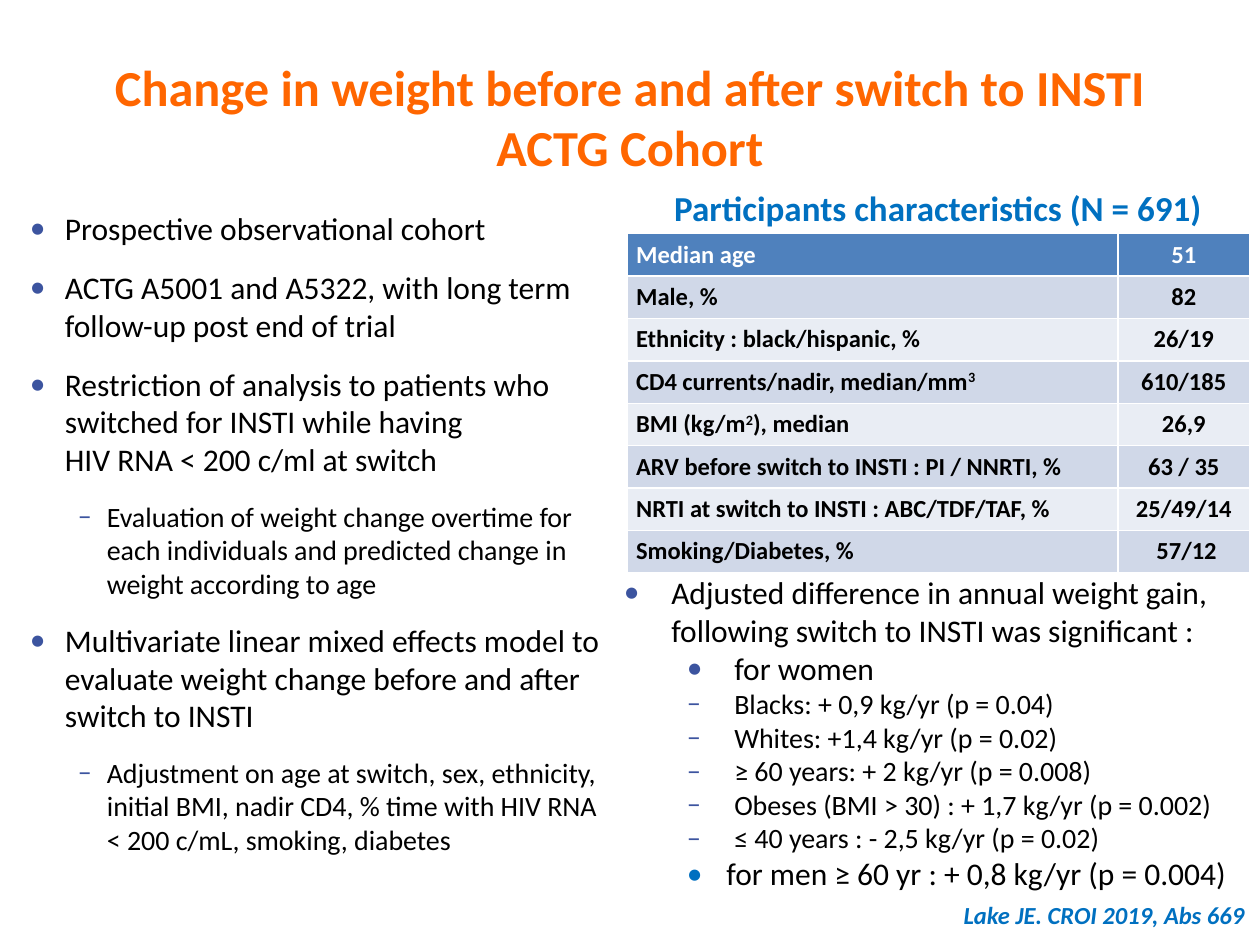
import pptx
import pptx.util
import pptx.oxml
import pptx.oxml.ns
import pptx.dml.color
import pptx.enum.text

Pt = pptx.util.Pt
qn = pptx.oxml.ns.qn
ALIGN = pptx.enum.text.PP_ALIGN
ANCHOR = pptx.enum.text.MSO_ANCHOR

COLORS = {
    "title": "FF6600", "text": "000000", "accent": "0070C0", "bullet": "3C549F",
    "header": "4F81BD", "header_text": "FFFFFF", "odd": "D0D8E8", "even": "E9EDF4",
}
FONTS = {
    "title": {"size": 28.8, "bold": True, "color": "title"},
    "heading": {"size": 20, "bold": True, "color": "accent"},
    "main": {"size": 18, "color": "text"},
    "sub": {"size": 16, "color": "text"},
    "header": {"size": 14, "bold": True, "color": "header_text"},
    "cell": {"size": 14, "bold": True, "color": "text"},
    "source": {"size": 14, "bold": True, "italic": True, "color": "accent"},
}
LEVELS = {
    "design": {"font": "main", "level": 0, "indent": 20, "hang": 20, "bullet": "•"},
    "detail": {"font": "sub", "level": 1, "indent": 44, "hang": 16.5, "bullet": "–"},
    "result": {"font": "main", "level": 0, "indent": 27, "hang": 27, "bullet": "•"},
    "women": {"font": "main", "level": 1, "indent": 63, "hang": 27, "bullet": "•"},
    "group": {"font": "sub", "level": 1, "indent": 63, "hang": 27, "bullet": "‒"},
    "men": {"font": "main", "level": 1, "indent": 58.5, "hang": 22.5, "bullet": "•",
            "bullet_color": "accent"},
}

TITLE = "Change in weight before and after switch to INSTI\nACTG Cohort"
HEADING = "Participants characteristics (N = 691)"
SOURCE = "Lake JE. CROI 2019, Abs 669"
METHODS = [
    ("design", "Prospective observational cohort"),
    ("design", "ACTG A5001 and A5322, with long term follow-up post end of trial"),
    ("design", "Restriction of analysis to patients who switched for INSTI while having \n"
               "HIV RNA < 200 c/ml at switch"),
    ("detail", "Evaluation of weight change overtime for each individuals and predicted "
               "change in weight according to age"),
    ("design", "Multivariate linear mixed effects model to evaluate weight change before "
               "and after switch to INSTI"),
    ("detail", "Adjustment on age at switch, sex, ethnicity, initial BMI, nadir CD4, "
               "% time with HIV RNA < 200 c/mL, smoking, diabetes"),
]
RESULTS = [
    ("result", "Adjusted difference in annual weight gain, following switch to INSTI "
               "was significant :"),
    ("women", "for women"),
    ("group", "Blacks: + 0,9 kg/yr (p = 0.04)"),
    ("group", "Whites: +1,4 kg/yr (p = 0.02)"),
    ("group", "≥ 60 years: + 2 kg/yr (p = 0.008)"),
    ("group", "Obeses (BMI > 30) : + 1,7 kg/yr (p = 0.002)"),
    ("group", "≤ 40 years : - 2,5 kg/yr (p = 0.02)"),
    ("men", "for men ≥ 60 yr : + 0,8 kg/yr (p = 0.004)"),
]
CHARACTERISTICS = [
    ("Median age", "51"),
    ("Male, %", "82"),
    ("Ethnicity : black/hispanic, %", "26/19"),
    ("CD4 currents/nadir, median/mm^3^", "610/185"),
    ("BMI (kg/m^2^), median", "26,9"),
    ("ARV before switch to INSTI : PI / NNRTI, %", "63 / 35"),
    ("NRTI at switch to INSTI : ABC/TDF/TAF, %", "25/49/14"),
    ("Smoking/Diabetes, %", " 57/12"),
]
COLUMN_WIDTHS = (280.5, 75)
ROW_HEIGHT = 24.25


def rgb(name):
    return pptx.dml.color.RGBColor.from_string(COLORS[name])


def write(p, text, style, align=None):
    p.alignment = align
    for i, part in enumerate(text.split("^")):
        for j, line in enumerate(part.split("\n")):
            if j:
                p.add_line_break()
            if not line:
                continue
            r = p.add_run()
            r.text = line
            r.font.name = "Calibri"
            for key, value in FONTS[style].items():
                if key == "color":
                    r.font.color.rgb = rgb(value)
                else:
                    setattr(r.font, key, Pt(value) if key == "size" else value)
            if i % 2:
                r.font._element.set("baseline", "30000")


def add_bullet(p, level):
    p.level = level["level"]
    pPr = p._p.get_or_add_pPr()
    pPr.set("marL", str(int(Pt(level["indent"]))))
    pPr.set("indent", str(-int(Pt(level["hang"]))))
    color = pptx.oxml.parse_xml(
        '<a:buClr xmlns:a="http://schemas.openxmlformats.org/drawingml/2006/main">'
        f'<a:srgbClr val="{COLORS[level.get("bullet_color", "bullet")]}"/></a:buClr>')
    pPr.append(color)
    for tag, attr, value in (("a:buFont", "typeface", "Calibri"),
                             ("a:buChar", "char", level["bullet"])):
        pPr.append(pptx.oxml.parse_xml(
            f'<{tag} xmlns:a="http://schemas.openxmlformats.org/drawingml/2006/main" '
            f'{attr}="{value}"/>'))


def add_box(s, place, wrap=True):
    tf = s.shapes.add_textbox(*map(Pt, place)).text_frame
    tf.word_wrap = wrap
    return tf


def add_list(s, place, items, gap=0):
    tf = add_box(s, place)
    for i, (name, text) in enumerate(items):
        p = tf.add_paragraph() if i else tf.paragraphs[0]
        p.space_before = Pt(gap if i else 0)
        p.space_after = Pt(gap)
        add_bullet(p, LEVELS[name])
        write(p, text, LEVELS[name]["font"])


def add_characteristics(s, left, top):
    rows = len(CHARACTERISTICS)
    table = s.shapes.add_table(rows, len(COLUMN_WIDTHS), Pt(left), Pt(top),
                               Pt(sum(COLUMN_WIDTHS)), Pt(ROW_HEIGHT * rows)).table
    for column, width in zip(table.columns, COLUMN_WIDTHS):
        column.width = Pt(width)
    for i, values in enumerate(CHARACTERISTICS):
        table.rows[i].height = Pt(ROW_HEIGHT)
        fill = "odd" if i % 2 else "even"
        for j, text in enumerate(values):
            cell = table.cell(i, j)
            cell.margin_left = cell.margin_right = Pt(5)
            cell.margin_top = cell.margin_bottom = Pt(3.5)
            cell.fill.solid()
            cell.fill.fore_color.rgb = rgb(fill if i else "header")
            write(cell.text_frame.paragraphs[0], text, "cell" if i else "header",
                  ALIGN.CENTER if j else ALIGN.LEFT)


def main():
    prs = pptx.Presentation()
    prs.slide_width, prs.slide_height = Pt(720), Pt(540)
    s = prs.slides.add_slide(prs.slide_layouts[5])

    title = s.shapes.title
    title.left, title.top, title.width, title.height = map(Pt, (36, 21.6, 648, 90))
    tf = title.text_frame
    tf.auto_size = pptx.enum.text.MSO_AUTO_SIZE.NONE
    tf.vertical_anchor = ANCHOR.MIDDLE
    write(tf.paragraphs[0], TITLE, "title", ALIGN.CENTER)

    add_list(s, (10, 116, 348.5, 391), METHODS, gap=6)
    add_characteristics(s, 358.5, 133.5)
    write(add_box(s, (339, 103, 394, 31.5)).paragraphs[0], HEADING, "heading", ALIGN.CENTER)
    add_list(s, (349.5, 324, 374.5, 191.5), RESULTS)
    write(add_box(s, (543.5, 511, 176.5, 24.5), wrap=False).paragraphs[0], SOURCE, "source")

    prs.save("out.pptx")


if __name__ == "__main__":
    main()
